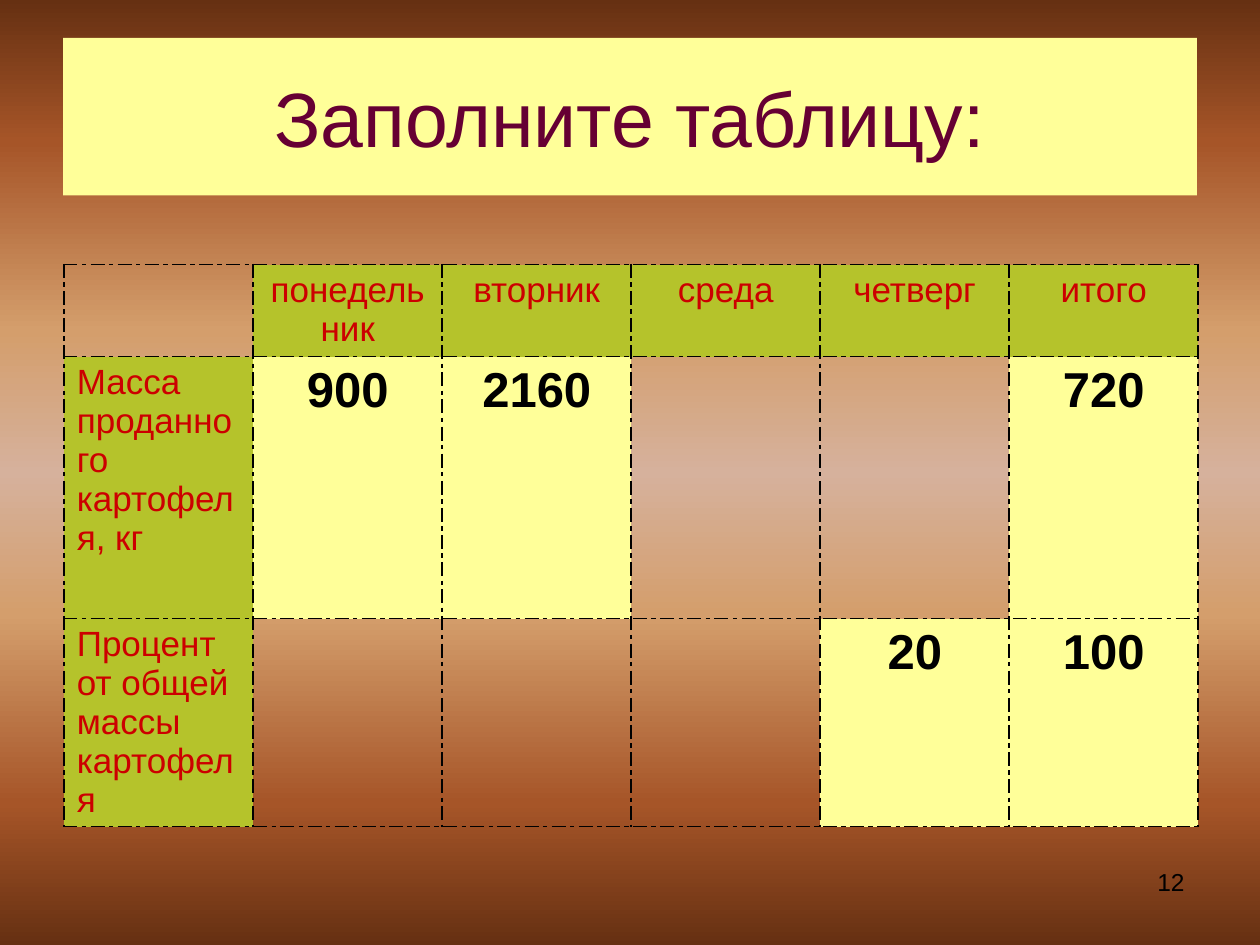
from lxml.etree import SubElement
from pptx import Presentation
from pptx.dml.color import RGBColor
from pptx.enum.text import MSO_ANCHOR as Anchor, PP_ALIGN as Align
from pptx.oxml import parse_xml
from pptx.oxml.ns import nsdecls, qn
from pptx.util import Inches, Pt

COLORS = {
    "title": "660033", "label": "CC0000", "value": "000000",
    "header_fill": "B5C32B", "value_fill": "FFFF99", "border": "000000",
}
GRADIENT = [
    (0, "663012"), (15, "A65528"), (35, "D49E6C"), (50, "D6B19C"),
    (65, "D49E6C"), (85, "A65528"), (100, "663012"),
]
TITLE = "Заполните таблицу:"
SLIDE_NUMBER = "12"
ROWS = [
    ["", "понедельник", "вторник", "среда", "четверг", "итого"],
    ["Масса проданного картофеля, кг", "900", "2160", "", "", "720"],
    ["Процент от общей массы картофеля", "", "", "", "20", "100"],
]
ROW_HEIGHTS = [0.73, 2.08, 1.65]
COLUMN_WIDTH = 1.5
FORMATS = {
    "title": {"name": "Arial", "size": Pt(44), "bold": False},
    "label": {"name": "Arial", "size": Pt(20), "bold": False},
    "value": {"name": "Arial", "size": Pt(28), "bold": True},
    "number": {"name": "Arial", "size": Pt(14), "bold": False},
}


def write(frame, text, style, color, alignment):
    paragraph = frame.paragraphs[0]
    paragraph.alignment = alignment
    run = paragraph.add_run()
    run.text = text
    for name, value in FORMATS[style].items():
        setattr(run.font, name, value)
    run.font.color.rgb = RGBColor.from_string(COLORS[color])


def paint_background(slide):
    fill = slide.background.fill
    fill.gradient()
    fill.gradient_angle = 270
    stops = slide.element.find(".//" + qn("a:gsLst"))
    for stop in list(stops):
        stops.remove(stop)
    for position, color in GRADIENT:
        stop = SubElement(stops, qn("a:gs"), pos=str(position * 1000))
        SubElement(stop, qn("a:srgbClr"), val=color)


def add_borders(cell):
    properties = cell._tc.get_or_add_tcPr()
    for index, side in enumerate(("lnL", "lnR", "lnT", "lnB")):
        properties.insert(index, parse_xml(
            f'<a:{side} {nsdecls("a")} w="{Pt(1)}"><a:solidFill>'
            f'<a:srgbClr val="{COLORS["border"]}"/></a:solidFill>'
            f'<a:prstDash val="sysDashDot"/></a:{side}>'))


def fill_cell(cell, text, is_header, alignment):
    if text:
        style = "label" if is_header else "value"
        fill = "header_fill" if is_header else "value_fill"
        write(cell.text_frame, text, style, style, alignment)
        cell.fill.solid()
        cell.fill.fore_color.rgb = RGBColor.from_string(COLORS[fill])
    else:
        cell.fill.background()
    add_borders(cell)


def add_data_table(slide):
    column_count = len(ROWS[0])
    table = slide.shapes.add_table(
        len(ROWS), column_count, Inches(0.51), Inches(2.1),
        Inches(COLUMN_WIDTH * column_count), Inches(sum(ROW_HEIGHTS))).table
    table.first_row = table.horz_banding = False
    for column in table.columns:
        column.width = Inches(COLUMN_WIDTH)
    for row_index, (texts, height) in enumerate(zip(ROWS, ROW_HEIGHTS)):
        table.rows[row_index].height = Inches(height)
        for column_index, text in enumerate(texts):
            fill_cell(table.cell(row_index, column_index), text,
                      row_index == 0 or column_index == 0,
                      Align.CENTER if column_index else Align.LEFT)


def main():
    presentation = Presentation()
    presentation.slide_width, presentation.slide_height = Inches(10), Inches(7.5)
    slide = presentation.slides.add_slide(presentation.slide_layouts[5])
    paint_background(slide)

    title = slide.shapes.title
    title.left, title.top = Inches(0.5), Inches(0.3)
    title.width, title.height = Inches(9), Inches(1.25)
    title.fill.solid()
    title.fill.fore_color.rgb = RGBColor.from_string(COLORS["value_fill"])
    title.text_frame.vertical_anchor = Anchor.MIDDLE
    write(title.text_frame, TITLE, "title", "title", Align.CENTER)

    add_data_table(slide)

    number = slide.shapes.add_textbox(
        Inches(7.17), Inches(6.83), Inches(2.33), Inches(0.52))
    number.text_frame.word_wrap = True
    write(number.text_frame, SLIDE_NUMBER, "number", "value", Align.RIGHT)
    presentation.save("out.pptx")


if __name__ == "__main__":
    main()
